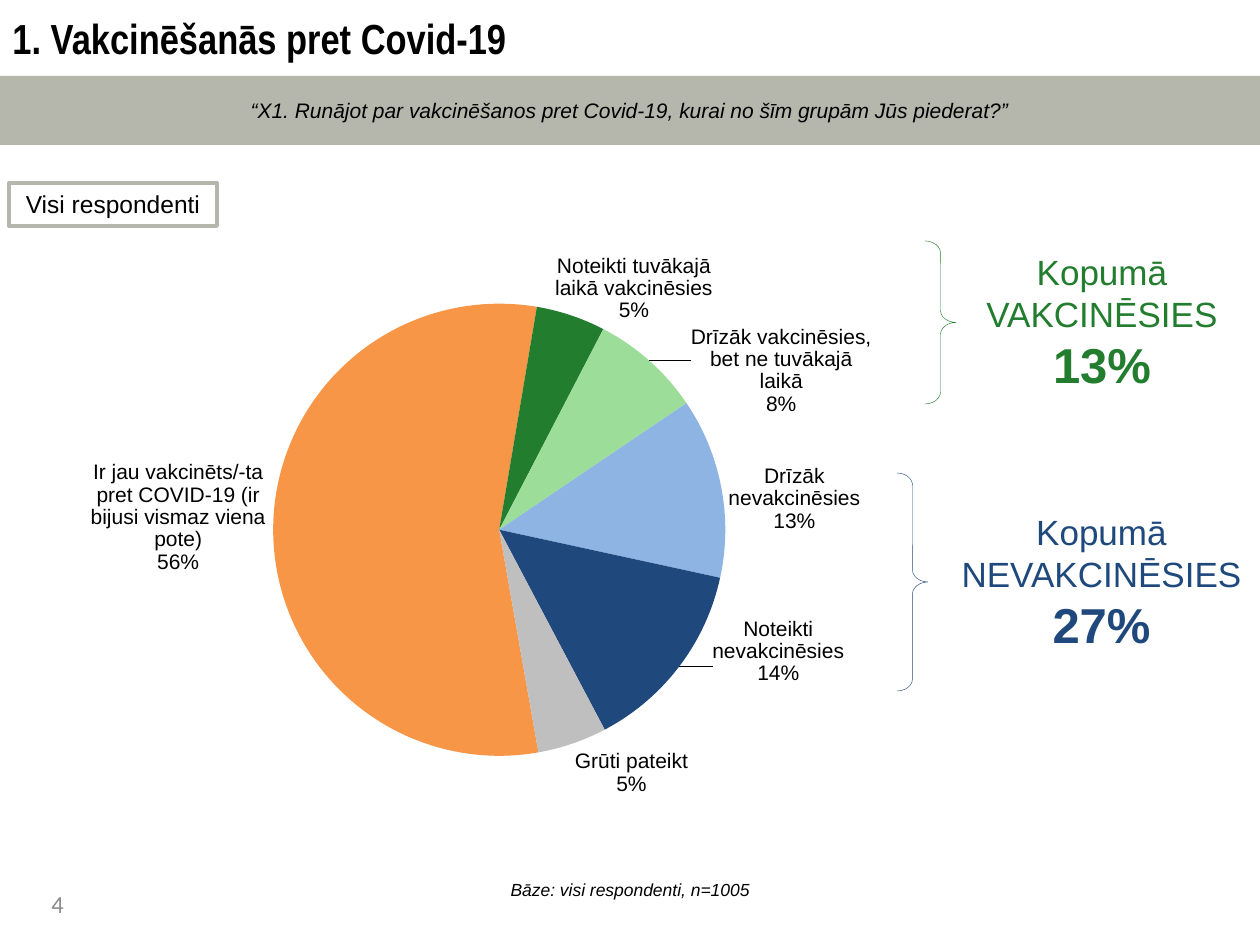
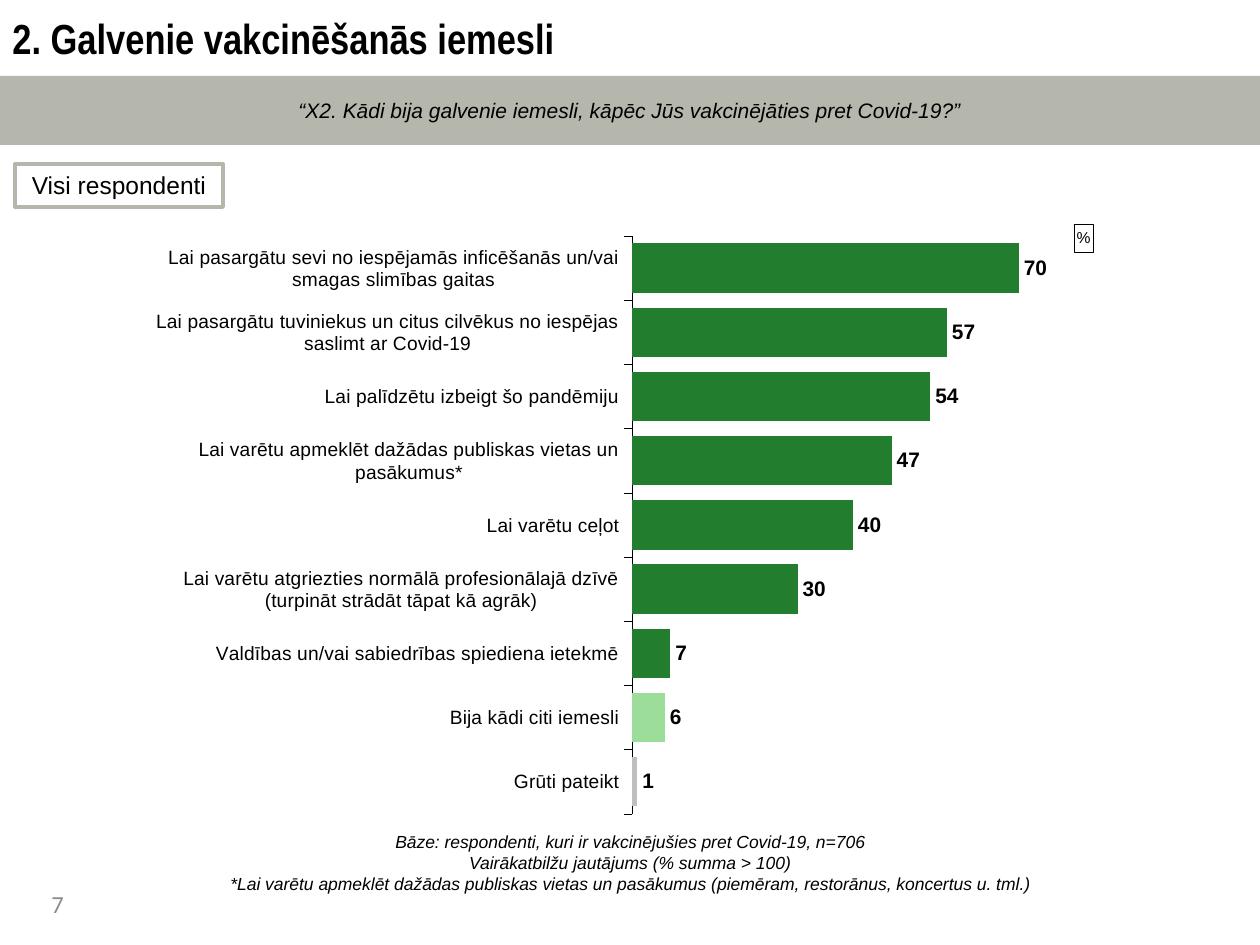
from copy import deepcopy

from lxml.etree import SubElement
from pptx import Presentation
from pptx.chart.data import CategoryChartData
from pptx.dml.color import RGBColor
from pptx.enum.chart import XL_CHART_TYPE as ChartType
from pptx.enum.chart import XL_LABEL_POSITION as LabelPosition
from pptx.enum.chart import XL_TICK_LABEL_POSITION as TickLabels
from pptx.enum.chart import XL_TICK_MARK as TickMark
from pptx.enum.shapes import MSO_SHAPE as Shape
from pptx.enum.text import MSO_ANCHOR as Anchor
from pptx.enum.text import PP_ALIGN as Align
from pptx.oxml.ns import qn
from pptx.util import Emu, Pt

PX = 914400 / 126
PAGE_WIDTH, PAGE_HEIGHT = 1260, 945

BLACK = RGBColor(0x00, 0x00, 0x00)
NUMBER_GRAY = RGBColor(0x8C, 0x8C, 0x8C)
BAND_GRAY = RGBColor(0xB5, 0xB7, 0xAD)
ORANGE = RGBColor(0xF7, 0x96, 0x46)
GREEN = RGBColor(0x23, 0x7D, 0x2E)
LIGHT_GREEN = RGBColor(0x9C, 0xDE, 0x99)
LIGHT_BLUE = RGBColor(0x8E, 0xB4, 0xE3)
NAVY = RGBColor(0x1F, 0x49, 0x7D)
SILVER = RGBColor(0xBF, 0xBF, 0xBF)

TITLE = {"name": "Arial Narrow", "size": Pt(24), "bold": True}
QUESTION = {"name": "Arial", "size": Pt(12), "italic": True}
BASE = {"name": "Arial", "size": Pt(10), "italic": True}
TAG = {"name": "Arial", "size": Pt(14)}
NUMBER = {"name": "Calibri", "size": Pt(14)}
TOTAL = {"name": "Arial", "size": Pt(20)}
TOTAL_VALUE = {"name": "Arial", "size": Pt(28), "bold": True}
PIE_LABEL = {"name": "Arial", "size": Pt(12)}
BAR_LABEL = {"name": "Arial", "size": Pt(12), "bold": True}
AXIS_LABEL = {"name": "Arial", "size": Pt(11)}
UNIT = {"name": "Arial", "size": Pt(9), "bold": False}

GROUPS = [
    ("Ir jau vakcinēts/-ta pret COVID-19 (ir bijusi vismaz viena pote)", 56, ORANGE),
    ("Noteikti tuvākajā laikā vakcinēsies", 5, GREEN),
    ("Drīzāk vakcinēsies, bet ne tuvākajā laikā", 8, LIGHT_GREEN),
    ("Drīzāk nevakcinēsies", 13, LIGHT_BLUE),
    ("Noteikti nevakcinēsies", 14, NAVY),
    ("Grūti pateikt", 5, SILVER),
]
GROUP_LABEL_SHIFTS = [(0, -0.02), (-0.02, 0.02), (0.04, 0.09), (0, 0.07), (0.03, -0.08)]
REASONS = [
    ("Lai pasargātu sevi no iespējamās inficēšanās un/vai smagas slimības gaitas", 70, GREEN),
    ("Lai pasargātu tuviniekus un citus cilvēkus no iespējas saslimt ar Covid-19", 57, GREEN),
    ("Lai palīdzētu izbeigt šo pandēmiju", 54, GREEN),
    ("Lai varētu apmeklēt dažādas publiskas vietas un pasākumus*", 47, GREEN),
    ("Lai varētu ceļot", 40, GREEN),
    ("Lai varētu atgriezties normālā profesionālajā dzīvē (turpināt strādāt tāpat kā agrāk)",
     30, GREEN),
    ("Valdības un/vai sabiedrības spiediena ietekmē", 7, GREEN),
    ("Bija kādi citi iemesli", 6, LIGHT_GREEN),
    ("Grūti pateikt", 1, SILVER),
]


def to_emu(*lengths):
    return [Emu(round(length * PX)) for length in lengths]


def style_font(font, values, color=BLACK):
    for name, value in values.items():
        setattr(font, name, value)
    font.color.rgb = color


def write(box, lines, color=BLACK, align=Align.CENTER, anchor=Anchor.MIDDLE):
    frame = box.text_frame
    frame.word_wrap = True
    frame.vertical_anchor = anchor
    for index, (text, style) in enumerate(lines):
        para = frame.add_paragraph() if index else frame.paragraphs[0]
        para.text = text
        para.alignment = align
        for span in para.runs:
            style_font(span.font, style, color)


def add_text(page, area, lines, **options):
    write(page.shapes.add_textbox(*to_emu(*area)), lines, **options)


def add_outline(page, kind, area, color, width):
    shape = page.shapes.add_shape(kind, *to_emu(*area))
    shape.shadow.inherit = False
    shape.fill.background()
    shape.line.color.rgb = color
    shape.line.width = Pt(width)
    return shape


def add_band(page, question):
    band = page.shapes.add_shape(Shape.RECTANGLE, *to_emu(0, 76, PAGE_WIDTH, 69))
    band.shadow.inherit = False
    band.fill.solid()
    band.fill.fore_color.rgb = BAND_GRAY
    band.line.fill.background()
    write(band, [(question, QUESTION)])


def add_page(deck, number, title, question, base_lines, base_top, tag_corner):
    page = deck.slides.add_slide(deck.slide_layouts[6])
    add_text(page, (39, 883, 134, 50), [(number, NUMBER)], color=NUMBER_GRAY,
             align=Align.LEFT, anchor=Anchor.TOP)
    add_text(page, (0, 0, PAGE_WIDTH, 76), [(title, TITLE)], align=Align.LEFT)
    add_band(page, question)
    add_text(page, (0, base_top, PAGE_WIDTH, 59), [(line, BASE) for line in base_lines])
    tag = add_outline(page, Shape.RECTANGLE, (*tag_corner, 208, 43), BAND_GRAY, 2.25)
    write(tag, [("Visi respondenti", TAG)], anchor=Anchor.TOP)
    return page


def add_total(page, brace_area, text_area, name, value, color):
    brace = add_outline(page, Shape.RIGHT_BRACE, brace_area, color, 0.25)
    brace.adjustments[0] = 0.39
    add_text(page, text_area, [(f"Kopumā\v{name}", TOTAL), (value, TOTAL_VALUE)], color=color)


def set_layout(parent, **values):
    layout = parent.find(qn("c:layout"))
    if layout is None:
        layout = SubElement(parent, qn("c:layout"))
        parent.insert(0, layout)
    manual = SubElement(layout, qn("c:manualLayout"))
    for name, value in values.items():
        SubElement(manual, qn(f"c:{name}")).set("val", str(value))


def shift_labels(labels, shifts):
    shared = [part for part in labels if part.tag != qn("c:showLeaderLines")]
    for index, (x, y) in enumerate(shifts):
        label = SubElement(labels, qn("c:dLbl"))
        labels.insert(index, label)
        position = SubElement(label, qn("c:idx"))
        position.set("val", str(index))
        label.extend([deepcopy(part) for part in shared])
        set_layout(label, x=x, y=y)
        label.insert(0, position)


def add_chart(page, kind, area, rows, plot_area, label_style, label_format):
    data = CategoryChartData(number_format="0")
    data.categories = [name for name, _, _ in rows]
    data.add_series("Series 1", [value for _, value, _ in rows])
    chart = page.shapes.add_chart(kind, *to_emu(*area), data).chart
    chart.has_legend = False
    chart.has_title = False
    style_font(chart.font, {"name": "Arial", "size": Pt(10)})
    left, top, width, height = plot_area
    set_layout(chart._chartSpace.chart.plotArea, layoutTarget="inner", xMode="edge",
               yMode="edge", x=left, y=top, w=width, h=height)
    series = chart.plots[0].series[0]
    for index, (_, _, color) in enumerate(rows):
        fill = series.points[index].format.fill
        fill.solid()
        fill.fore_color.rgb = color
    labels = series.data_labels
    style_font(labels.font, label_style)
    values = {"show_value": True, "position": LabelPosition.OUTSIDE_END,
              "number_format": label_format, "number_format_is_linked": False}
    for name, value in values.items():
        setattr(labels, name, value)
    return chart


def add_group_pie(page):
    chart = add_chart(page, ChartType.PIE, (9, 204, 908, 665), GROUPS,
                      (0.29, 0.15, 0.5, 0.68), PIE_LABEL, '0"%"')
    plot = chart.plots[0]
    plot.vary_by_categories = True
    labels = plot.series[0].data_labels
    labels.show_category_name = True
    bubble_flag = labels._element.find(qn("c:showBubbleSize"))
    separator = SubElement(labels._element, qn("c:separator"))
    separator.text = "\n"
    bubble_flag.addnext(separator)
    shift_labels(labels._element, GROUP_LABEL_SHIFTS)
    SubElement(plot._element, qn("c:firstSliceAng")).set("val", "170")


def add_reason_bars(page):
    chart = add_chart(page, ChartType.BAR_CLUSTERED, (156, 218, 946, 602), REASONS,
                      (0.5, 0.03, 0.5, 0.96), BAR_LABEL, "0")
    plot = chart.plots[0]
    plot.vary_by_categories = False
    plot.gap_width = 30
    reasons, percents = chart.category_axis, chart.value_axis
    reasons.reverse_order = True
    reasons.has_major_gridlines = False
    reasons.major_tick_mark = TickMark.OUTSIDE
    reasons.tick_label_position = TickLabels.LOW
    reasons.format.line.color.rgb = BLACK
    reasons.format.line.width = Pt(0.25)
    style_font(reasons.tick_labels.font, AXIS_LABEL)
    percents.minimum_scale = 0
    percents.maximum_scale = 85
    percents.has_major_gridlines = False
    percents.visible = False
    title = chart.chart_title
    title.text_frame.text = "%"
    style_font(title.text_frame.paragraphs[0].runs[0].font, UNIT)
    title.format.line.color.rgb = BLACK
    title.format.line.width = Pt(0.25)
    set_layout(title._element, xMode="edge", yMode="edge", x=0.97, y=0.01)


def main():
    """Build the two survey slides and save the deck."""
    deck = Presentation()
    deck.slide_width, deck.slide_height = to_emu(PAGE_WIDTH, PAGE_HEIGHT)

    groups = add_page(
        deck, "4", "1. Vakcinēšanās pret Covid-19",
        "“X1. Runājot par vakcinēšanos pret Covid-19, kurai no šīm grupām Jūs piederat?”",
        ["Bāze: visi respondenti, n=1005"], 860, (9, 183))
    add_group_pie(groups)
    add_total(groups, (897, 473, 31, 218), (947, 504, 309, 155), "NEVAKCINĒSIES", "27%", NAVY)
    add_total(groups, (925, 241, 31, 163), (967, 244, 270, 155), "VAKCINĒSIES", "13%", GREEN)

    reasons = add_page(
        deck, "7", "2. Galvenie vakcinēšanās iemesli",
        "“X2. Kādi bija galvenie iemesli, kāpēc Jūs vakcinējāties pret Covid-19?”",
        ["Bāze: respondenti, kuri ir vakcinējušies pret Covid-19, n=706",
         "Vairākatbilžu jautājums (% summa > 100)",
         "*Lai varētu apmeklēt dažādas publiskas vietas un pasākumus "
         "(piemēram, restorānus, koncertus u. tml.)"], 833, (15, 164))
    add_reason_bars(reasons)
    deck.save("out.pptx")


if __name__ == "__main__":
    main()
